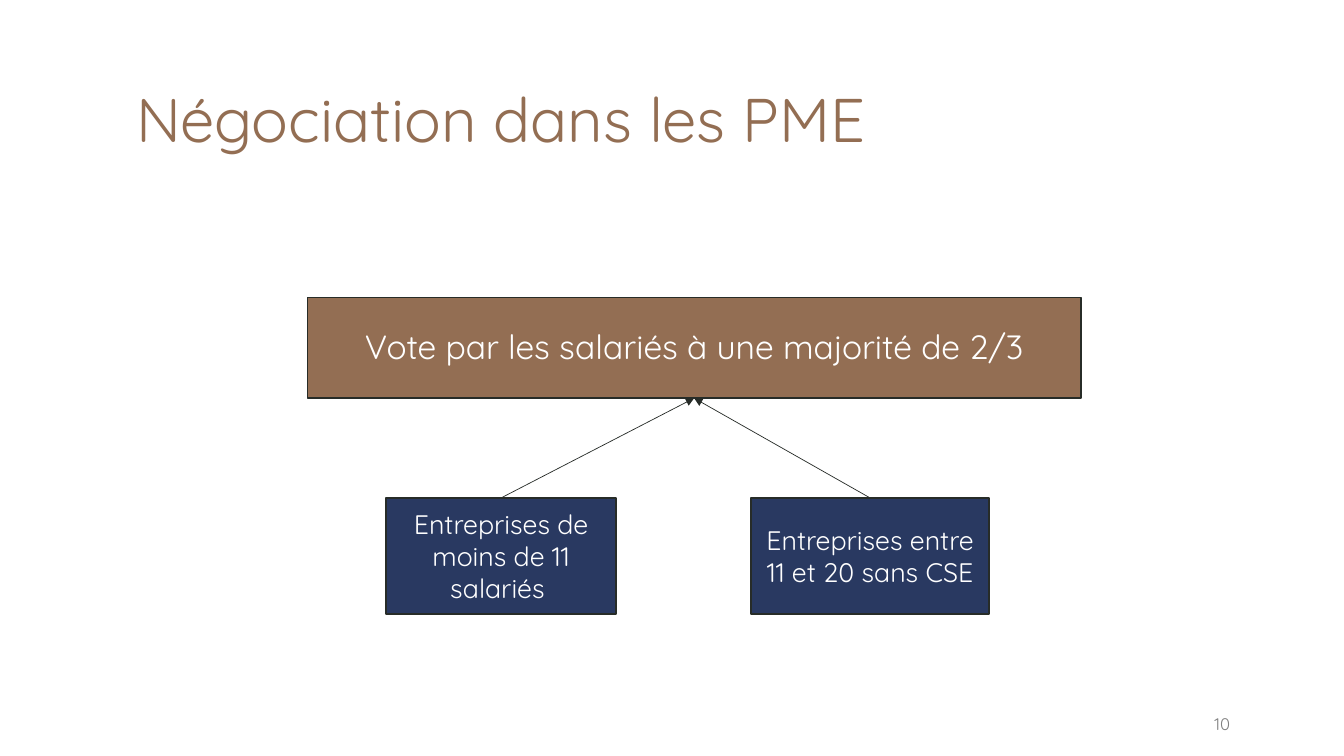
from dataclasses import dataclass

from pptx import Presentation
from pptx import util as u
from pptx.dml.color import RGBColor
from pptx.enum import shapes, text
from pptx.oxml.ns import qn
from lxml import etree


@dataclass(frozen=True)
class Theme:
    font: str = "Quicksand"
    brown: str = "936E53"
    navy: str = "293961"
    ink: str = "272C28"
    white: str = "FFFFFF"
    grey: str = "808080"
    title: float = 44
    vote: float = 24
    company: float = 19.1
    number: float = 12


THEME = Theme()
PX = 9144  # 100 px to the inch


def place(box, left, top, width, height, fill=None):
    """Position a shape and, given a fill colour, paint and outline it."""
    box.left, box.top = left * PX, top * PX
    box.width, box.height = width * PX, height * PX
    if fill:
        box.fill.solid()
        box.fill.fore_color.rgb = RGBColor.from_string(fill)
        box.line.color.rgb = RGBColor.from_string(THEME.ink)
        box.line.width = u.Pt(1)


def write(box, words, size, color, align=text.PP_ALIGN.CENTER,
          anchor=text.MSO_ANCHOR.MIDDLE, spacing=1.0, inset=(13, 7)):
    frame = box.text_frame
    frame.word_wrap = True
    frame.auto_size = text.MSO_AUTO_SIZE.NONE
    frame.vertical_anchor = anchor
    frame.margin_left = frame.margin_right = inset[0] * PX
    frame.margin_top = frame.margin_bottom = inset[1] * PX
    para = frame.paragraphs[0]
    properties = para._p.get_or_add_pPr()
    properties.set("marL", "0")
    properties.set("indent", "0")
    etree.SubElement(properties, qn("a:buNone"))
    para.alignment = align
    para.line_spacing = spacing
    para.space_before = u.Pt(0)
    span = para.add_run()
    span.text = words
    span.font.name = THEME.font
    span.font.size = u.Pt(size)
    span.font.color.rgb = RGBColor.from_string(color)


deck = Presentation()
deck.slide_width, deck.slide_height = 1333 * PX, 750 * PX
page = deck.slides.add_slide(deck.slide_layouts[1])

title = page.shapes.title
place(title, 122, 8, 1111, 153)
write(title, "Négociation dans les PME", THEME.title, THEME.brown,
      align=text.PP_ALIGN.LEFT, anchor=text.MSO_ANCHOR.BOTTOM, spacing=0.85)

vote = page.placeholders[1]
place(vote, 305, 295, 767, 100, fill=THEME.brown)
write(vote, "Vote par les salariés à une majorité de 2/3", THEME.vote,
      THEME.white, spacing=0.95)

companies = [
    (383, 228, "Entreprises de moins de 11 salariés "),
    (745, 236, "Entreprises entre 11 et 20 sans CSE"),
]
TOP_SITE, BOTTOM_SITE = 0, 2
for left, width, words in companies:
    company = page.shapes.add_shape(shapes.MSO_SHAPE.RECTANGLE, 0, 0, 0, 0)
    company.shadow.inherit = False
    place(company, left, 494, width, 115, fill=THEME.navy)
    write(company, words, THEME.company, THEME.white, inset=(10, 5))

    arrow = page.shapes.add_connector(shapes.MSO_CONNECTOR.STRAIGHT, 0, 0, 0, 0)
    arrow.begin_connect(company, TOP_SITE)
    arrow.end_connect(vote, BOTTOM_SITE)
    arrow.line.color.rgb = RGBColor.from_string(THEME.ink)
    arrow.line.width = u.Pt(0.5)
    etree.SubElement(arrow.line._get_or_add_ln(), qn("a:tailEnd"), type="triangle")
    etree.SubElement(arrow._element.spPr, qn("a:effectLst"))

number = page.shapes.add_textbox(0, 0, 0, 0)
place(number, 1112, 700, 121, 35)
write(number, "10", THEME.number, THEME.grey, align=text.PP_ALIGN.RIGHT,
      anchor=text.MSO_ANCHOR.BOTTOM)

deck.save("out.pptx")
